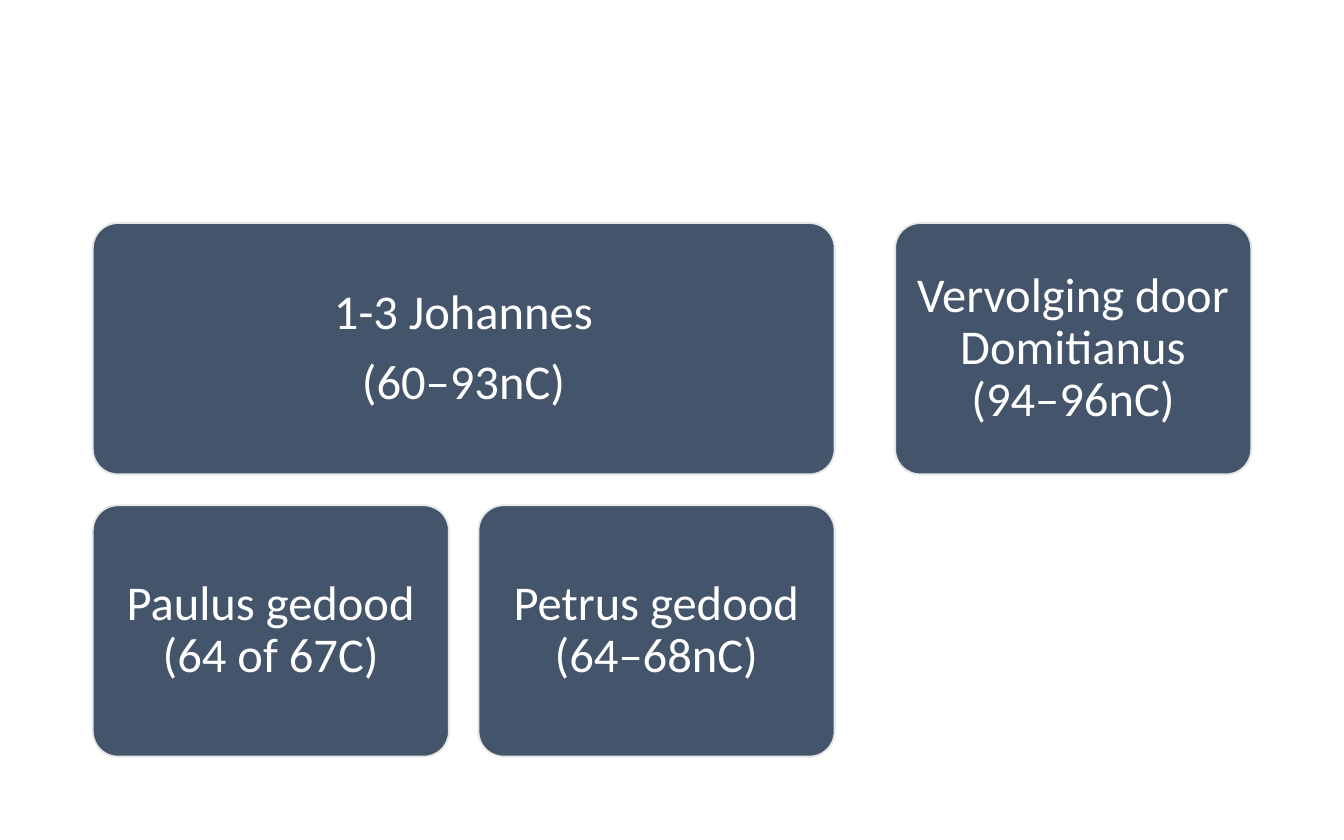
from dataclasses import dataclass

from pptx import Presentation
from pptx.dml.color import RGBColor
from pptx.enum import shapes, text
from pptx.util import Inches, Pt

COLORS = {"fill": "44546A", "line": "E7E6E6", "text": "FFFFFF"}
LEFT, TOP = 0.69, 1.66
WIDTH, HEIGHT = 2.65, 1.87
COLUMN_GAP, ROW_GAP, GROUP_GAP = 0.22, 0.23, 0.45
INSET = 0.1


@dataclass
class Card:
    left: float
    top: float
    width: float
    paragraphs: tuple[str, ...]


def rgb(name: str) -> RGBColor:
    return RGBColor.from_string(COLORS[name])


def draw_card(s, card: Card) -> None:
    sp = s.shapes.add_shape(
        shapes.MSO_SHAPE.ROUNDED_RECTANGLE,
        Inches(card.left), Inches(card.top), Inches(card.width), Inches(HEIGHT),
    )
    sp.adjustments[0] = 0.1
    sp.shadow.inherit = False
    sp.fill.solid()
    sp.fill.fore_color.rgb = rgb("fill")
    sp.line.color.rgb = rgb("line")
    sp.line.width = Pt(1)
    tf = sp.text_frame
    tf.word_wrap = True
    tf.vertical_anchor = text.MSO_ANCHOR.MIDDLE
    tf.margin_left = tf.margin_right = Inches(INSET)
    tf.margin_top = tf.margin_bottom = Inches(INSET)
    for i, content in enumerate(card.paragraphs):
        p = tf.add_paragraph() if i else tf.paragraphs[0]
        p.text = content
        p.alignment = text.PP_ALIGN.CENTER
        p.line_spacing = 0.9
        p.space_after = Pt(9)
        for r in p.runs:
            r.font.name = "Calibri"
            r.font.size = Pt(26)
            r.font.color.rgb = rgb("text")


def main() -> None:
    prs = Presentation()
    prs.slide_width, prs.slide_height = Inches(10), Inches(6.25)
    s = prs.slides.add_slide(prs.slide_layouts[6])
    wide = 2 * WIDTH + COLUMN_GAP
    second_row = TOP + HEIGHT + ROW_GAP
    cards = [
        Card(LEFT, TOP, wide, ("1-3 Johannes", "(60–93nC)")),
        Card(LEFT, second_row, WIDTH, ("Paulus gedood\n(64 of 67C)",)),
        Card(LEFT + WIDTH + COLUMN_GAP, second_row, WIDTH,
             ("Petrus gedood\n(64–68nC)",)),
        Card(LEFT + wide + GROUP_GAP, TOP, WIDTH,
             ("Vervolging door Domitianus (94–96nC)",)),
    ]
    for card in cards:
        draw_card(s, card)
    prs.save("out.pptx")


if __name__ == "__main__":
    main()
